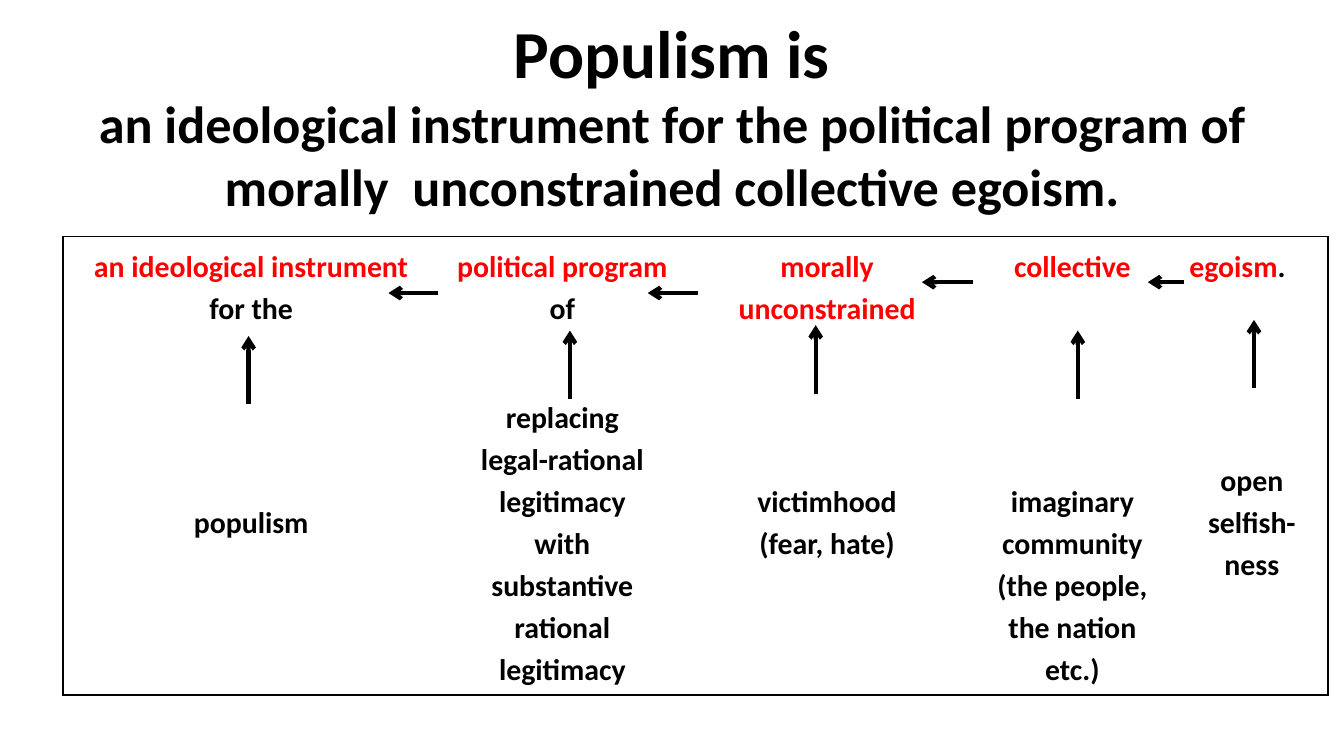
from lxml import etree
from pptx import Presentation
from pptx import util as u
from pptx.dml.color import RGBColor
from pptx.enum import shapes, text
from pptx.oxml.ns import qn

Pt = u.Pt
BLACK = RGBColor(0, 0, 0)
RED = RGBColor(255, 0, 0)
CENTER = text.PP_ALIGN.CENTER
TOP = text.MSO_ANCHOR.TOP
MIDDLE = text.MSO_ANCHOR.MIDDLE
BOTTOM = text.MSO_ANCHOR.BOTTOM


def style_span(span, size, color):
    span.font.name = "Calibri"
    span.font.size = Pt(size)
    span.font.bold = True
    span.font.color.rgb = color


def set_border(cell, side, visible):
    line = etree.SubElement(cell._tc.get_or_add_tcPr(), qn(f"a:ln{side}"), w=str(Pt(1)))
    if visible:
        fill = etree.SubElement(line, qn("a:solidFill"))
        etree.SubElement(fill, qn("a:srgbClr"), val=str(BLACK))
    else:
        etree.SubElement(line, qn("a:noFill"))


deck = Presentation()
deck.slide_width = Pt(720)
deck.slide_height = Pt(405)
page = deck.slides.add_slide(deck.slide_layouts[6])

title = page.shapes.add_textbox(Pt(0), Pt(10), Pt(720), Pt(102.2))
title.text_frame.word_wrap = True
title.text_frame.vertical_anchor = MIDDLE
title.text_frame.text = (
    "Populism is\van ideological instrument for the political program of "
    "morally  unconstrained collective egoism."
)
para = title.text_frame.paragraphs[0]
para.alignment = CENTER
for span, size in zip(para.runs, (36, 28)):
    style_span(span, size, BLACK)

columns = [
    (201.6, "an ideological instrument", " for the", MIDDLE, "populism"),
    (131.8, "political program", " of", BOTTOM,
     "replacing\nlegal-rational legitimacy\nwith\nsubstantive rational legitimacy"),
    (151.9, "morally unconstrained", "", MIDDLE, "victimhood\n(fear, hate)"),
    (110.9, "collective", "", BOTTOM, "imaginary community\n(the people, the nation etc.)"),
    (81.4, "egoism", ".", MIDDLE, "open selfish-ness"),
]
last = len(columns) - 1
table = page.shapes.add_table(
    2, len(columns), Pt(33.8), Pt(126.8), Pt(677.6), Pt(245.5)
).table
table.first_row = False
table.horz_banding = False
table.rows[0].height = Pt(58.3)
table.rows[1].height = Pt(187.2)

for col, (width, term, ending, anchor, meaning) in enumerate(columns):
    table.columns[col].width = Pt(width)
    head, body = table.cell(0, col), table.cell(1, col)
    head.text_frame.text = term
    style_span(head.text_frame.paragraphs[0].runs[0], 16, RED)
    if ending:
        span = head.text_frame.paragraphs[0].add_run()
        span.text = ending
        style_span(span, 16, BLACK)
    body.text_frame.text = meaning
    for para in body.text_frame.paragraphs:
        style_span(para.runs[0], 16, BLACK)
    head.vertical_anchor = TOP
    body.vertical_anchor = anchor
    for row, cell in enumerate((head, body)):
        for para in cell.text_frame.paragraphs:
            para.alignment = CENTER
            para.line_spacing = 1.15
        edges = {"L": col == 0, "R": col == last, "T": row == 0, "B": row == 1}
        for side, visible in edges.items():
            set_border(cell, side, visible)
        cell.fill.background()
table.cell(0, last).text_frame.paragraphs[0].alignment = text.PP_ALIGN.LEFT

up_arrows = [(133.2, 180), (305.3, 177.1), (437, 174.2), (577.4, 177.1), (671.8, 171.4)]
left_arrows = [(234.7, 208.1, 157), (373.7, 347, 157), (521.3, 493.9, 151.2), (634.3, 614.9, 151.2)]
arrows = [(x, tip + 36.7, x, tip) for x, tip in up_arrows]
arrows += [(start, y, tip, y) for start, tip, y in left_arrows]
for ends in arrows:
    arrow = page.shapes.add_connector(shapes.MSO_CONNECTOR.STRAIGHT, *map(Pt, ends))
    arrow.line.color.rgb = BLACK
    arrow.line.width = Pt(2.25)
    etree.SubElement(arrow.line._get_or_add_ln(), qn("a:tailEnd"), type="arrow")
    etree.SubElement(arrow._element.spPr, qn("a:effectLst"))

deck.save("out.pptx")
